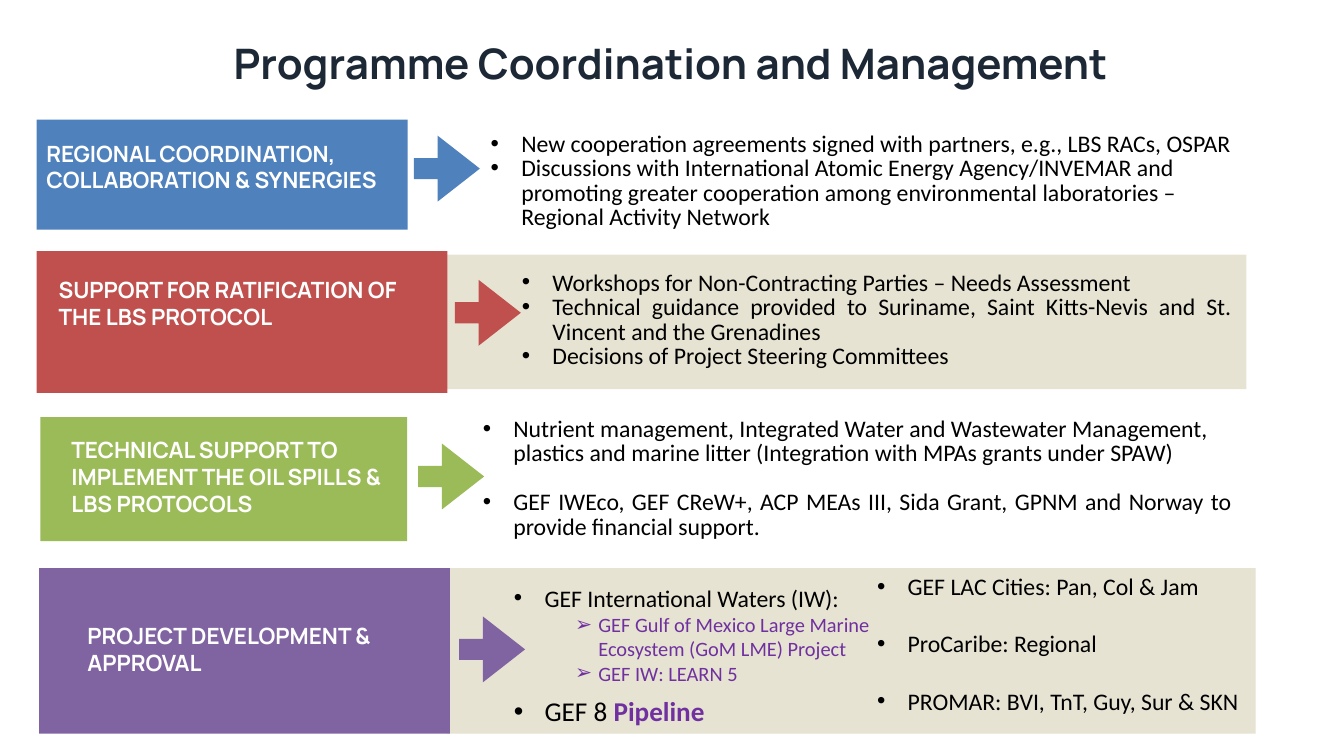
from dataclasses import dataclass

from lxml.etree import SubElement
from pptx import Presentation
from pptx.dml.color import RGBColor
from pptx.enum.shapes import MSO_SHAPE
from pptx.enum.text import MSO_ANCHOR, MSO_AUTO_SIZE, PP_ALIGN
from pptx.oxml.ns import qn
from pptx.util import Inches, Pt


@dataclass(frozen=True)
class Theme:
    heading_font: str = "Manrope"
    body_font: str = "Calibri"
    bullet_font: str = "Arial"
    ink: str = "1C2835"
    black: str = "000000"
    white: str = "FFFFFF"
    band: str = "E6E3D2"
    accent: str = "7030A0"
    blue: str = "4F81BD"
    red: str = "C0504D"
    green: str = "9BBB59"
    purple: str = "8064A2"
    title_size: float = 49.5
    label_size: float = 26.4
    body_size: float = 28
    detail_size: float = 24
    pipeline_size: float = 32
    tight_line: float = 28.9


THEME = Theme()


@dataclass(frozen=True)
class Area:
    left: float
    top: float
    width: float
    height: float


@dataclass(frozen=True)
class Span:
    text: str
    size: float = THEME.body_size
    color: str = THEME.black
    bold: bool = False
    font: str = THEME.body_font


@dataclass(frozen=True)
class Para:
    spans: tuple[Span, ...]
    bullet: str = "•"
    indent: float = 0.5
    hanging: float = 0.5
    align: PP_ALIGN = PP_ALIGN.LEFT
    line: Pt | float | None = None
    before: float = 0


@dataclass(frozen=True)
class Programme:
    label: str
    color: str
    block: Area
    label_area: Area
    arrow_left: float
    arrow_top: float
    band: Area | None = None


@dataclass(frozen=True)
class Notes:
    area: Area
    paras: tuple[Para, ...]


def bullet_para(text: str, size: float = THEME.body_size,
                color: str = THEME.black, **format_options) -> Para:
    return Para((Span(text, size, color),), **format_options)


def tight_para(text: str, **format_options) -> Para:
    return bullet_para(text, line=Pt(THEME.tight_line), **format_options)


def detail_para(text: str) -> Para:
    return bullet_para(text, THEME.detail_size, THEME.accent,
                       bullet="➢", indent=1.38, hanging=0.38)


def heading_para(text: str, size: float, color: str,
                 align: PP_ALIGN = PP_ALIGN.LEFT) -> Para:
    span = Span(text, size, color, True, THEME.heading_font)
    return Para((span,), bullet="", indent=0, hanging=0, align=align)


PROGRAMMES = (
    Programme("REGIONAL COORDINATION, COLLABORATION & SYNERGIES", THEME.blue,
              Area(0.6, 1.96, 6.07, 1.8), Area(0.66, 2.23, 6, 0.99), 6.77, 2.22),
    Programme("SUPPORT FOR RATIFICATION OF THE LBS PROTOCOL", THEME.red,
              Area(0.6, 4.11, 6.72, 2.32), Area(0.86, 4.46, 5.8, 0.99), 7.44, 4.58,
              Area(7.16, 4.17, 13.23, 2.2)),
    Programme("TECHNICAL SUPPORT TO IMPLEMENT THE OIL SPILLS & LBS PROTOCOLS",
              THEME.green,
              Area(0.66, 6.83, 6, 2.03), Area(1.07, 7.08, 5.8, 1.43), 6.84, 7.26),
    Programme("PROJECT DEVELOPMENT & APPROVAL", THEME.purple,
              Area(0.64, 9.3, 6.72, 2.71), Area(1.33, 10.13, 5.84, 0.99), 7.51, 10.09,
              Area(7.31, 9.3, 13.23, 2.71)),
)

NOTES = (
    Notes(Area(7.93, 1.81, 12.46, 2.03), (
        bullet_para("New cooperation agreements signed with partners, e.g., "
                    "LBS RACs, OSPAR", line=1.5),
        tight_para("Discussions with International Atomic Energy Agency/INVEMAR and "
                   "promoting greater cooperation among environmental laboratories – "
                   "Regional Activity Network"),
    )),
    Notes(Area(8.44, 4.38, 11.8, 1.73), tuple(
        tight_para(text, align=PP_ALIGN.JUSTIFY) for text in (
            "Workshops for Non-Contracting Parties – Needs Assessment",
            "Technical guidance provided to Suriname, Saint Kitts-Nevis and St. "
            "Vincent and the Grenadines",
            "Decisions of Project Steering Committees",
        )
    )),
    Notes(Area(7.8, 6.77, 12.44, 2.14), (
        tight_para("Nutrient management, Integrated Water and Wastewater Management, "
                   "plastics and marine litter (Integration with MPAs grants under SPAW)"),
        tight_para("GEF IWEco, GEF CReW+, ACP MEAs III, Sida Grant, GPNM and Norway "
                   "to provide financial support.",
                   align=PP_ALIGN.JUSTIFY, before=THEME.tight_line),
    )),
    Notes(Area(8.31, 9.49, 6.02, 2.47), (
        bullet_para("GEF International Waters (IW):"),
        detail_para("GEF Gulf of Mexico Large Marine Ecosystem (GoM LME) Project"),
        detail_para("GEF IW: LEARN 5"),
        Para((Span("GEF 8 ", THEME.pipeline_size),
              Span("Pipeline", THEME.pipeline_size, THEME.accent, True)), before=11),
    )),
    Notes(Area(14.25, 9.3, 7.09, 2.46), (
        bullet_para("GEF LAC Cities: Pan, Col & Jam"),
        bullet_para("ProCaribe: Regional", before=34),
        bullet_para("PROMAR: BVI, TnT, Guy, Sur & SKN", before=34),
    )),
)


def place(area: Area) -> tuple[int, ...]:
    return tuple(Inches(n) for n in (area.left, area.top, area.width, area.height))


def add_block(page, kind: MSO_SHAPE, area: Area, color: str):
    block = page.shapes.add_shape(kind, *place(area))
    block.shadow.inherit = False
    block.fill.solid()
    block.fill.fore_color.rgb = RGBColor.from_string(color)
    block.line.fill.background()
    return block


def add_text(page, area: Area, paras: tuple[Para, ...], *, wrap: bool = True,
             anchor: MSO_ANCHOR = MSO_ANCHOR.MIDDLE) -> None:
    frame = page.shapes.add_textbox(*place(area)).text_frame
    frame.word_wrap = wrap
    frame.auto_size = MSO_AUTO_SIZE.SHAPE_TO_FIT_TEXT
    frame.vertical_anchor = anchor
    for index, para in enumerate(paras):
        paragraph = frame.add_paragraph() if index else frame.paragraphs[0]
        paragraph.alignment = para.align
        if para.line:
            paragraph.line_spacing = para.line
        if para.before:
            paragraph.space_before = Pt(para.before)
        if para.bullet:
            properties = paragraph._p.get_or_add_pPr()
            properties.set("marL", str(Inches(para.indent)))
            properties.set("indent", str(-Inches(para.hanging)))
            SubElement(properties, qn("a:buFont"), typeface=THEME.bullet_font)
            SubElement(properties, qn("a:buChar"), char=para.bullet)
        for span in para.spans:
            run = paragraph.add_run()
            run.text = span.text
            run.font.name = span.font
            run.font.size = Pt(span.size)
            run.font.bold = span.bold
            run.font.color.rgb = RGBColor.from_string(span.color)


def add_programme(page, programme: Programme) -> None:
    if programme.band:
        add_block(page, MSO_SHAPE.RECTANGLE, programme.band, THEME.band)
    add_block(page, MSO_SHAPE.RECTANGLE, programme.block, programme.color)
    arrow_area = Area(programme.arrow_left, programme.arrow_top, 1.08, 1.08)
    arrow = add_block(page, MSO_SHAPE.RIGHT_ARROW, arrow_area, programme.color)
    arrow.adjustments[0] = 0.32
    arrow.adjustments[1] = 0.64
    label = heading_para(programme.label, THEME.label_size, THEME.white)
    add_text(page, programme.label_area, (label,))


def main() -> None:
    # Page of 1583 by 891 points
    deck = Presentation()
    deck.slide_width = Inches(1583 / 72)
    deck.slide_height = Inches(891 / 72)
    page = deck.slides.add_slide(deck.slide_layouts[6])

    # Title
    title = heading_para("Programme Coordination and Management",
                         THEME.title_size, THEME.ink, PP_ALIGN.CENTER)
    add_text(page, Area(3, 0.57, 15.94, 0.93), (title,), wrap=False,
             anchor=MSO_ANCHOR.TOP)

    # Coloured programme rows
    for programme in PROGRAMMES:
        add_programme(page, programme)

    # Bulleted notes beside the rows
    for notes in NOTES:
        add_text(page, notes.area, notes.paras)

    deck.save("out.pptx")


if __name__ == "__main__":
    main()
